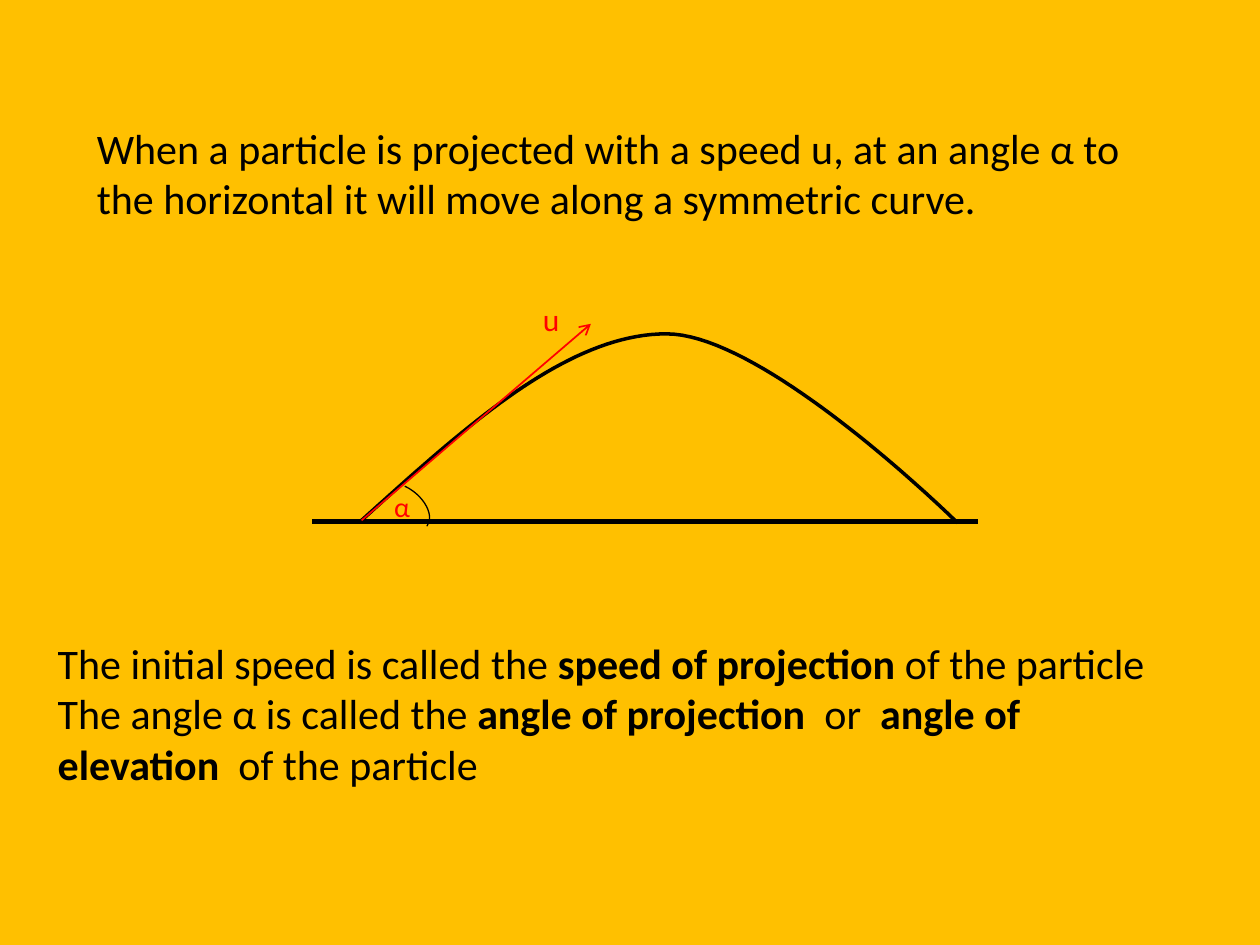
"""Build a slide that introduces the projection of a particle."""
from typing import NamedTuple

from lxml import etree
from pptx import Presentation
from pptx import util as u
from pptx.dml.color import RGBColor
from pptx.enum import shapes, text
from pptx.oxml.ns import qn

AMBER = RGBColor(0xFF, 0xC0, 0x00)
BLACK = RGBColor(0x00, 0x00, 0x00)
RED = RGBColor(0xFF, 0x00, 0x00)
FONT = "Calibri"
COLUMNS, ROWS = 100, 75
CELL = u.Inches(0.1)
CURVE_STEPS = 40


class Point(NamedTuple):
    """A place on the slide grid, in columns and rows."""

    column: float
    row: float


class Box(NamedTuple):
    """An area of the slide grid, in columns and rows."""

    column: float
    row: float
    width: float
    height: float


class Run(NamedTuple):
    """A stretch of text with one weight."""

    words: str
    bold: bool = False


class Label(NamedTuple):
    """A block of text and its format."""

    box: Box
    paragraphs: list[list[Run]]
    size: float
    color: RGBColor = BLACK


class Segment(NamedTuple):
    """A straight line and its format."""

    start: Point
    end: Point
    width: float
    color: RGBColor = BLACK
    arrow: bool = False


class Bezier(NamedTuple):
    """A cubic curve given by its four control points."""

    start: Point
    first: Point
    second: Point
    end: Point


LAUNCH = Point(28.7, 41.3)
APEX = Point(52.9, 26.5)
LANDING = Point(76, 41.5)
TRAJECTORY = [
    Bezier(LAUNCH, Point(36.9, 33.9), Point(45, 26.5), APEX),
    Bezier(APEX, Point(60.8, 26.5), LANDING, LANDING),
]
GROUND = Segment(Point(24.8, 41.4), Point(77.6, 41.4), 3)
VELOCITY = Segment(LAUNCH, Point(46.9, 25.7), 1, RED, arrow=True)
ANGLE_BOX = Box(29.4, 38.7, 5, 3.1)
LABELS = [
    Label(
        Box(6.7, 9.2, 88.2, 9.1),
        [[Run("When a particle is projected with a speed u, at an angle α to "
              "the horizontal it will move along a symmetric curve.")]],
        24,
    ),
    Label(Box(30.3, 38.4, 2.4, 3.7), [[Run("α")]], 16, RED),
    Label(Box(42.1, 23.3, 3.9, 4), [[Run("u")]], 18, RED),
    Label(
        Box(3.6, 50.1, 91.3, 13.1),
        [
            [Run("The initial speed is called the "),
             Run("speed of projection", True),
             Run(" of the particle")],
            [Run("The angle α is called the "),
             Run("angle of projection ", True),
             Run(" or "),
             Run(" angle of elevation ", True),
             Run(" of the particle")],
        ],
        24,
    ),
]


def to_emu(values: tuple[float, ...]) -> list[int]:
    """Turn grid units into lengths."""
    return [round(value * CELL) for value in values]


def format_line(line, *, color: RGBColor, width: float) -> None:
    """Set the colour and width of a line."""
    line.color.rgb = color
    line.width = u.Pt(width)


def add_run(paragraph, words: str, *, size: float, color: RGBColor, bold: bool = False) -> None:
    """Append formatted text to a paragraph."""
    run = paragraph.add_run()
    run.text = words
    run.font.name = FONT
    run.font.size = u.Pt(size)
    run.font.bold = bold
    run.font.color.rgb = color


def draw_label(slide, label: Label) -> None:
    """Draw a block of text."""
    frame = slide.shapes.add_textbox(*to_emu(label.box)).text_frame
    frame.word_wrap = True
    frame.auto_size = text.MSO_AUTO_SIZE.SHAPE_TO_FIT_TEXT
    for index, runs in enumerate(label.paragraphs):
        paragraph = frame.add_paragraph() if index else frame.paragraphs[0]
        for run in runs:
            add_run(paragraph, run.words, size=label.size, color=label.color, bold=run.bold)


def draw_segment(slide, segment: Segment) -> None:
    """Draw a straight line, with an arrowhead if asked."""
    connector = slide.shapes.add_connector(
        shapes.MSO_CONNECTOR.STRAIGHT, *to_emu(segment.start + segment.end)
    )
    format_line(connector.line, color=segment.color, width=segment.width)
    properties = connector._element.spPr
    if segment.arrow:
        etree.SubElement(properties.find(qn("a:ln")), qn("a:tailEnd"), type="arrow")
    etree.SubElement(properties, qn("a:effectLst"))


def point_on(curve: Bezier, share: float) -> list[int]:
    """Find the point at a share of the way along a curve."""
    rest = 1 - share
    weights = (rest**3, 3 * rest**2 * share, 3 * rest * share**2, share**3)
    return to_emu(tuple(
        sum(weight * value for weight, value in zip(weights, axis))
        for axis in zip(*curve)
    ))


def draw_trajectory(slide, curves: list[Bezier]) -> None:
    """Draw joined curves as one open outline."""
    builder = slide.shapes.build_freeform(*to_emu(curves[0].start))
    points = [
        point_on(curve, step / CURVE_STEPS)
        for curve in curves
        for step in range(1, CURVE_STEPS + 1)
    ]
    builder.add_line_segments(points, close=False)
    shape = builder.convert_to_shape()
    shape.shadow.inherit = False
    shape.fill.background()
    format_line(shape.line, color=BLACK, width=2)


def draw_angle(slide, box: Box) -> None:
    """Draw the arc that marks the angle of projection."""
    arc = slide.shapes.add_shape(shapes.MSO_SHAPE.ARC, *to_emu(box))
    arc.adjustments[0] = 144.3
    arc.adjustments[1] = 0
    arc.rotation = 37.3
    arc.shadow.inherit = False
    arc.fill.background()
    format_line(arc.line, color=BLACK, width=0.75)


def main() -> None:
    """Build and save the presentation."""
    presentation = Presentation()
    presentation.slide_width, presentation.slide_height = to_emu((COLUMNS, ROWS))
    slide = presentation.slides.add_slide(presentation.slide_layouts[6])
    slide.background.fill.solid()
    slide.background.fill.fore_color.rgb = AMBER
    draw_segment(slide, GROUND)
    draw_trajectory(slide, TRAJECTORY)
    draw_segment(slide, VELOCITY)
    draw_angle(slide, ANGLE_BOX)
    for label in LABELS:
        draw_label(slide, label)
    presentation.save("out.pptx")


if __name__ == "__main__":
    main()
